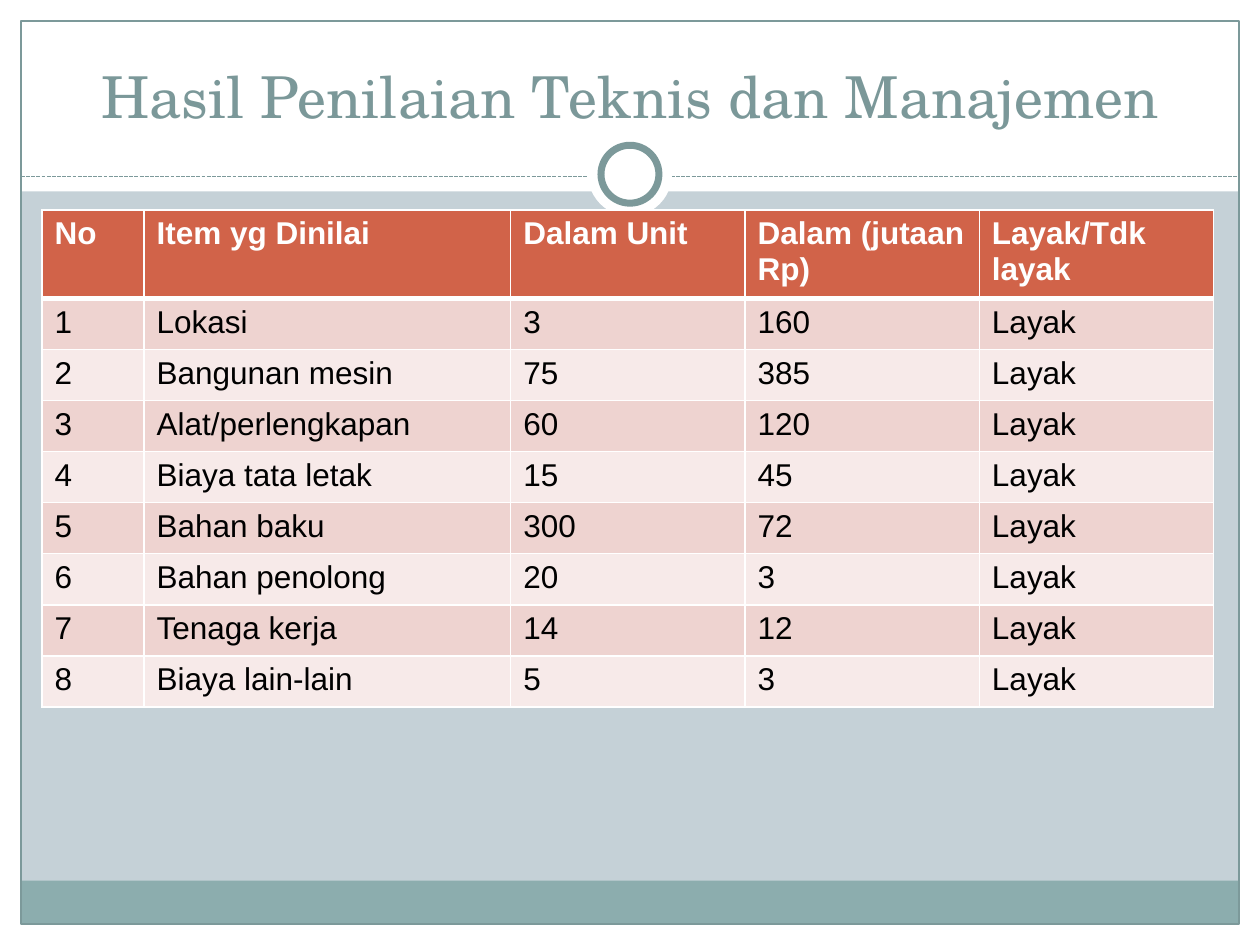
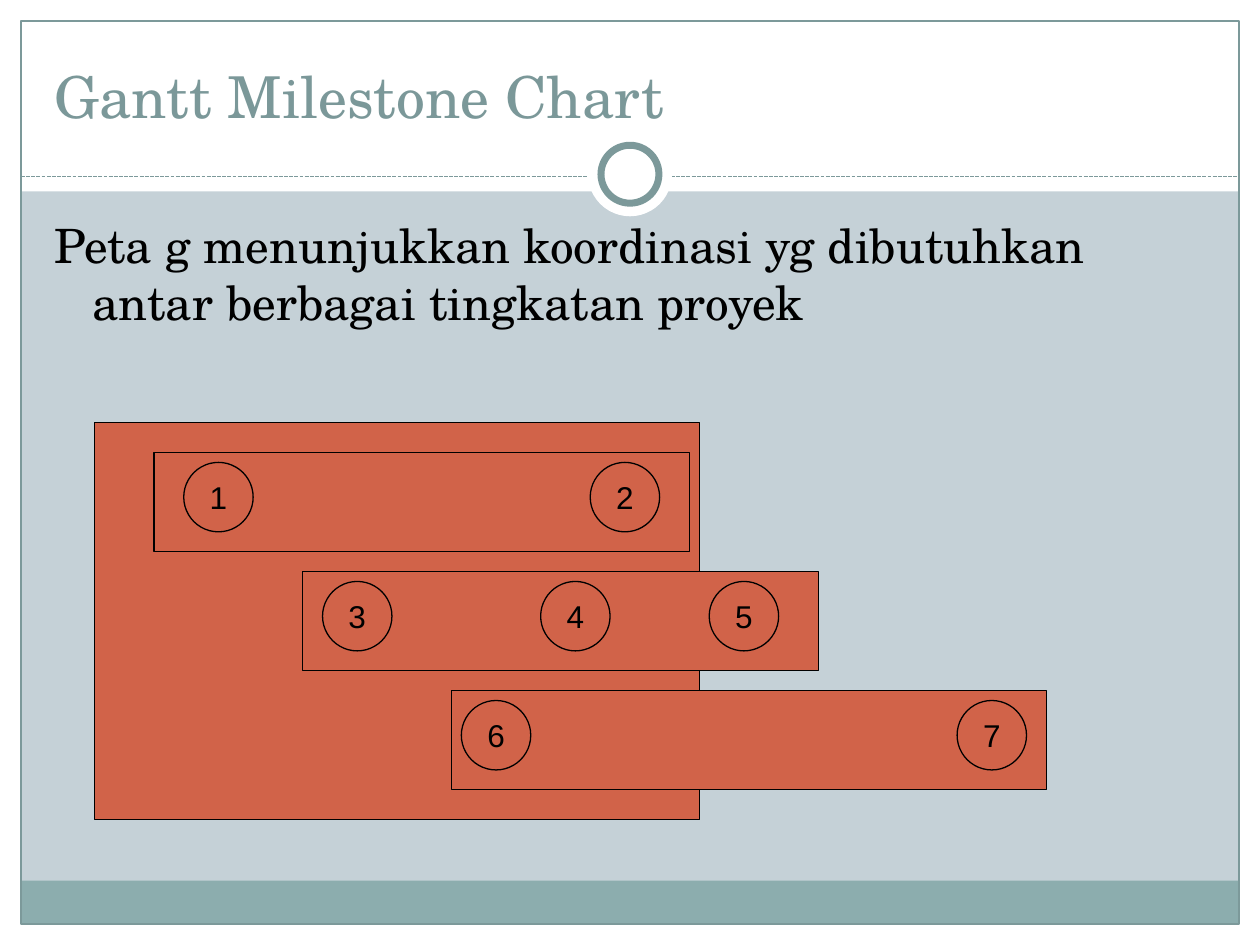
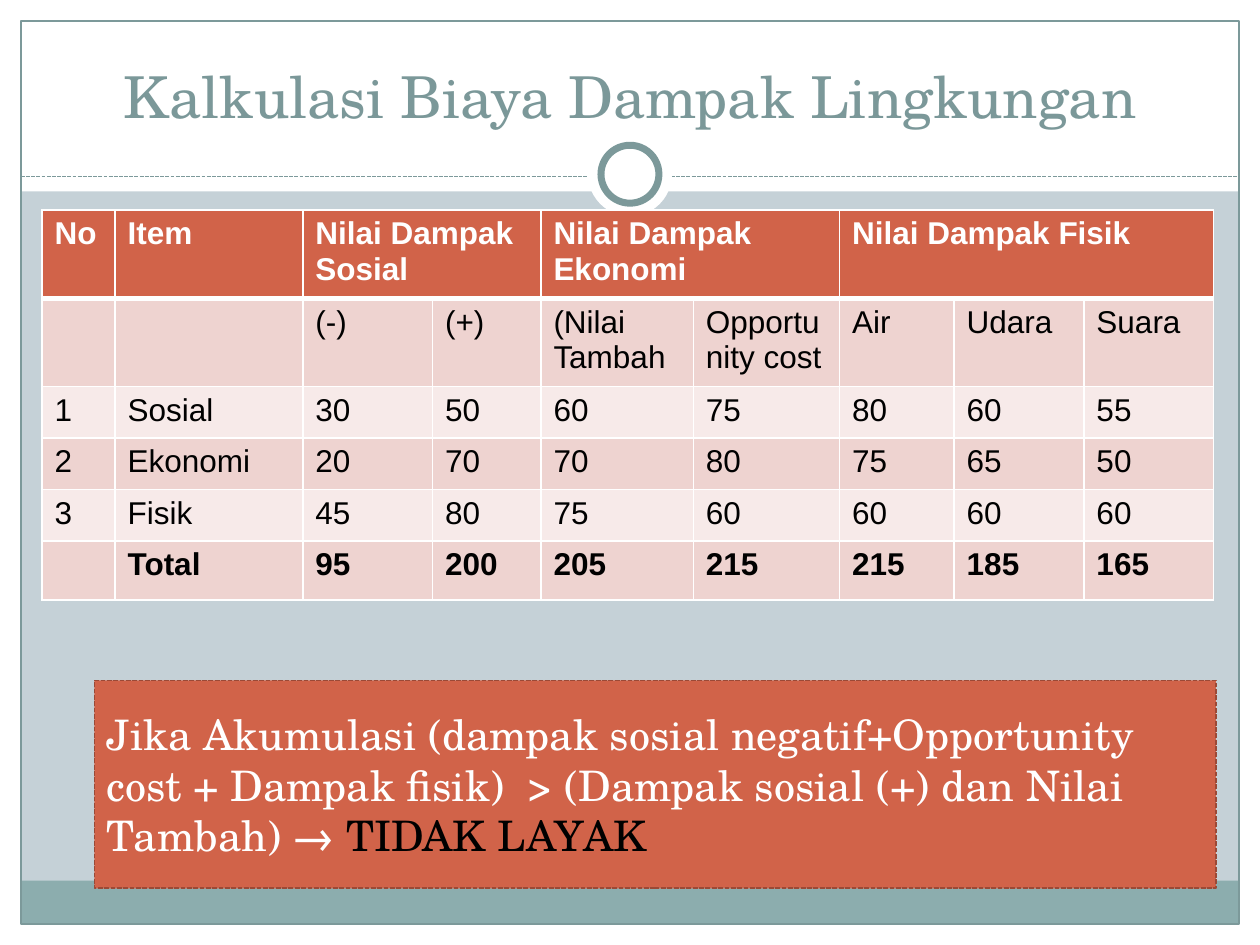
from dataclasses import dataclass
from typing import NamedTuple

from lxml import etree
from pptx import Presentation
from pptx.dml.color import RGBColor
from pptx.enum.dml import MSO_LINE
from pptx.enum.shapes import MSO_CONNECTOR, MSO_SHAPE
from pptx.enum.text import MSO_ANCHOR, PP_ALIGN
from pptx.oxml.ns import qn
from pptx.util import Inches, Pt

RECT, OVAL = MSO_SHAPE.RECTANGLE, MSO_SHAPE.OVAL
STRAIGHT = MSO_CONNECTOR.STRAIGHT
DASH = MSO_LINE.SQUARE_DOT
LEFT, CENTER, JUSTIFY = PP_ALIGN.LEFT, PP_ALIGN.CENTER, PP_ALIGN.JUSTIFY
MIDDLE, BOTTOM = MSO_ANCHOR.MIDDLE, MSO_ANCHOR.BOTTOM


@dataclass(frozen=True)
class Theme:
    back: str = "C5D1D7"
    white: str = "FFFFFF"
    black: str = "000000"
    band: str = "8CADAE"
    rule: str = "7C999A"
    title: str = "7B9899"
    main: str = "D16349"
    edge: str = "9B4936"
    odd: str = "EED3D0"
    even: str = "F7EAE9"
    serif: str = "TeX Gyre Schola"
    sans: str = "Arial"
    head: float = 33
    body: float = 27
    note: float = 24
    cell: float = 18
    thin: float = 0.75


class Box(NamedTuple):
    x: float
    y: float
    w: float
    h: float

    def inner(self, cols, rows, x, y, w, h):
        dx, dy = self.w / cols, self.h / rows
        return Box(self.x + x * dx, self.y + y * dy, w * dx, h * dy)

    def area(self, x, y, w, h):
        return self.inner(60, 45, x, y, w, h)

    def size(self):
        return [Inches(v) for v in self]


T = Theme()
PAGE = Box(0, 0, 10, 7.5)
GRID = PAGE.area(2, 10, 55.8, 23.4)


def rgb(code):
    return RGBColor.from_string(code)


def style(para, face, size, color, bold=False):
    for run in para.runs:
        font = run.font
        font.name, font.size, font.bold = face, Pt(size), bold
        font.color.rgb = rgb(color)


def draw(slide, kind, box, fill=None, line=None, width=T.thin):
    shape = slide.shapes.add_shape(kind, *box.size())
    shape.shadow.inherit = False
    if fill:
        shape.fill.solid()
        shape.fill.fore_color.rgb = rgb(fill)
    else:
        shape.fill.background()
    if line:
        shape.line.color.rgb = rgb(line)
        shape.line.width = Pt(width)
    else:
        shape.line.fill.background()
    return shape


def write(slide, box, text, size, color, align):
    frame = slide.shapes.add_textbox(*box.size()).text_frame
    frame.word_wrap = True
    frame.text = text
    para = frame.paragraphs[0]
    para.alignment = align
    style(para, T.serif, size, color)
    return frame


def frame(slide, box):
    fill = slide.background.fill
    fill.solid()
    fill.fore_color.rgb = rgb(T.back)
    for edge in ((0, 44, 60, 1), (0, 0, 60, 9.12), (0, 0, 1, 45), (59, 0, 1, 45)):
        draw(slide, RECT, box.area(*edge), T.white)
    draw(slide, RECT, box.area(1, 41.94, 58, 2.06), T.band)
    draw(slide, RECT, box.area(1, 1, 58, 43), line=T.rule)
    x, y, w, _ = box.area(1, 8.4, 58, 0).size()
    rule = slide.shapes.add_connector(STRAIGHT, x, y, x + w, y)
    rule.line.color.rgb = rgb(T.rule)
    rule.line.width = Pt(T.thin)
    rule.line.dash_style = DASH
    etree.SubElement(rule._element.spPr, qn("a:effectLst"))
    draw(slide, OVAL, box.area(28, 6.3, 4, 4), T.white)
    draw(slide, OVAL, box.area(28.62, 6.92, 2.76, 2.76), T.white, T.rule, 4)


def start(deck, title, align=CENTER):
    slide = deck.slides.add_slide(deck.slide_layouts[6])
    frame(slide, PAGE)
    text = write(slide, PAGE.area(2, 1.5, 56, 5), title, T.head, T.title, align)
    text.vertical_anchor = BOTTOM
    return slide


def border(cell, top, bottom):
    props = cell._tc.get_or_add_tcPr()
    for side, width in (("L", 1), ("R", 1), ("T", top), ("B", bottom)):
        line = etree.SubElement(props, qn("a:ln" + side), w=str(Pt(width)))
        fill = etree.SubElement(line, qn("a:solidFill"))
        etree.SubElement(fill, qn("a:srgbClr"), val=T.white)


def table(slide, box, cols, rows, data, spans=(), total=None):
    grid = slide.shapes.add_table(len(rows), len(cols), *box.size()).table
    grid.horz_banding = False
    for col, share in zip(grid.columns, cols):
        col.width = Inches(box.w * share / sum(cols))
    for row, share in zip(grid.rows, rows):
        row.height = Inches(box.h * share / sum(rows))
    for r, line in enumerate(data):
        fill = T.main if r == 0 else T.odd if r % 2 else T.even
        for c, text in enumerate(line):
            cell = grid.cell(r, c)
            border(cell, 3 if r == 1 else 1, 3 if r == 0 else 1)
            cell.fill.solid()
            cell.fill.fore_color.rgb = rgb(fill)
            cell.text = text
            color = T.black if r else T.white
            style(cell.text_frame.paragraphs[0], T.sans, T.cell, color, r in (0, total))
    for first, last in spans:
        grid.cell(0, first).merge(grid.cell(0, last))


def gantt(slide, box):
    bars = (
        (6, 54, ((3, "1"), (44, "2"))),
        (21, 52, ((2, "3"), (24, "4"), (41, "5"))),
        (36, 60, ((1, "6"), (51, "7"))),
    )
    draw(slide, RECT, box, T.main, T.black)
    for i, (x, w, marks) in enumerate(bars):
        y = 3 + 12 * i
        draw(slide, RECT, box.inner(61, 40, x, y, w, 10), T.main, T.black)
        for step, label in marks:
            spot = box.inner(61, 40, x + step, y + 1, 7, 7)
            text = draw(slide, OVAL, spot, T.main, T.black).text_frame
            text.word_wrap = False
            text.vertical_anchor = MIDDLE
            text.text = label
            para = text.paragraphs[0]
            para.alignment = CENTER
            style(para, T.sans, T.cell, T.black)


def note(slide, box, text, stress):
    shape = draw(slide, RECT, box, T.main, T.edge, 0.9)
    shape.line.dash_style = DASH
    shape.text_frame.word_wrap = True
    shape.text_frame.vertical_anchor = MIDDLE
    para = shape.text_frame.paragraphs[0]
    para.alignment = LEFT
    for words in (text, stress):
        para.add_run().text = words
    style(para, T.serif, T.note, T.white)
    para.runs[-1].font.color.rgb = rgb(T.black)


def score(deck):
    slide = start(deck, "Hasil Penilaian Teknis dan Manajemen")
    items = (
        ("Lokasi", "3", "160"),
        ("Bangunan mesin", "75", "385"),
        ("Alat/perlengkapan", "60", "120"),
        ("Biaya tata letak", "15", "45"),
        ("Bahan baku", "300", "72"),
        ("Bahan penolong", "20", "3"),
        ("Tenaga kerja", "14", "12"),
        ("Biaya lain-lain", "5", "3"),
    )
    data = [("No", "Item yg Dinilai", "Dalam Unit", "Dalam (jutaan Rp)", "Layak/Tdk layak")]
    data += [(str(i), *item, "Layak") for i, item in enumerate(items, 1)]
    table(slide, GRID, (0.81, 2.91, 1.86, 1.86, 1.86), [0.66] + [0.41] * 8, data)


def chart(deck):
    slide = start(deck, "Gantt Milestone Chart", JUSTIFY)
    text = "Peta g menunjukkan koordinasi yg dibutuhkan antar berbagai tingkatan proyek"
    body = write(slide, PAGE.area(2, 10, 55.8, 30), text, T.body, T.black, LEFT)
    para = body.paragraphs[0]
    para.space_before = Pt(T.body * 0.2)
    props = para._p.get_or_add_pPr()
    props.set("marL", str(Inches(0.3)))
    props.set("indent", str(Inches(-0.3)))
    gantt(slide, PAGE.area(4.5, 20.13, 28.8, 18.9))


def cost(deck):
    slide = start(deck, "Kalkulasi Biaya Dampak Lingkungan")
    data = (
        ("No", "Item", "Nilai Dampak Sosial", "", "Nilai Dampak Ekonomi", "",
         "Nilai Dampak Fisik", "", ""),
        ("", "", "(-)", "(+)", "(Nilai Tambah", "Opportunity cost", "Air", "Udara", "Suara"),
        ("1", "Sosial", "30", "50", "60", "75", "80", "60", "55"),
        ("2", "Ekonomi", "20", "70", "70", "80", "75", "65", "50"),
        ("3", "Fisik", "45", "80", "75", "60", "60", "60", "60"),
        ("", "Total", "95", "200", "205", "215", "215", "185", "165"),
    )
    cols = (0.58, 1.49, 1.03, 0.86, 1.21, 1.16, 0.91, 1.03, 1.03)
    rows = (0.66, 0.66, 0.41, 0.41, 0.41, 0.47)
    spans = ((2, 3), (4, 5), (6, 8))
    table(slide, PAGE.area(2, 10, 55.8, 18.06), cols, rows, data, spans, total=5)
    text = ("Jika Akumulasi (dampak sosial negatif+Opportunity cost + Dampak fisik)  > "
            "(Dampak sosial (+) dan Nilai Tambah) → ")
    note(slide, PAGE.area(4.5, 32.4, 53.4, 9.9), text, "TIDAK LAYAK")


def main():
    deck = Presentation()
    deck.slide_width, deck.slide_height = Inches(PAGE.w), Inches(PAGE.h)
    for build in (score, chart, cost):
        build(deck)
    deck.save("out.pptx")


if __name__ == "__main__":
    main()
